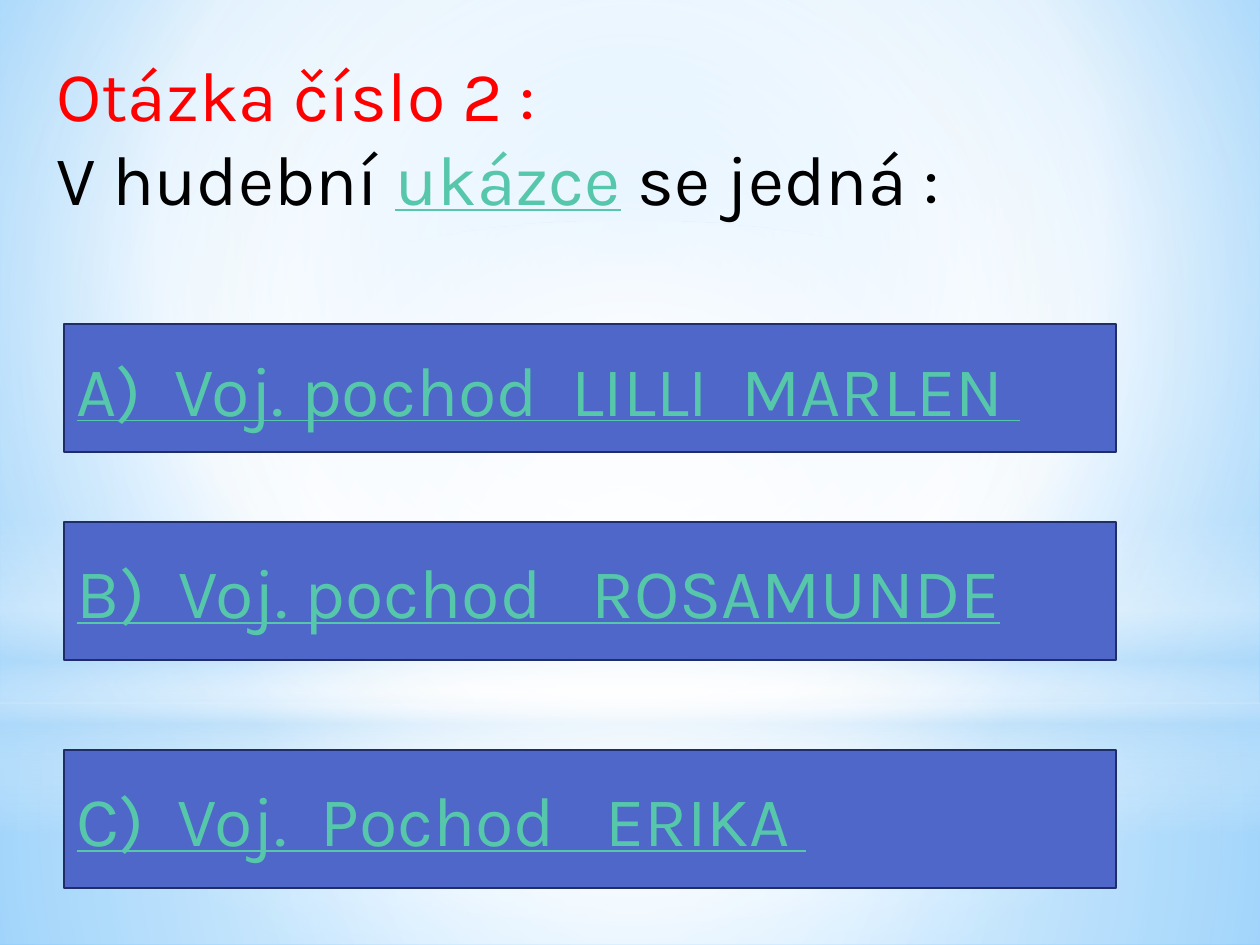
from dataclasses import dataclass

from lxml import etree
from pptx import Presentation
from pptx.dml.color import RGBColor
from pptx.enum.shapes import MSO_SHAPE
from pptx.enum.text import MSO_ANCHOR, MSO_AUTO_SIZE, PP_ALIGN
from pptx.oxml.ns import qn
from pptx.util import Inches, Pt

RECT, OVAL = MSO_SHAPE.RECTANGLE, MSO_SHAPE.OVAL
MIDDLE, LEFT = MSO_ANCHOR.MIDDLE, PP_ALIGN.LEFT
GROW = MSO_AUTO_SIZE.SHAPE_TO_FIT_TEXT
SLIDE_W, SLIDE_H = Inches(10), Inches(7.5)


@dataclass(frozen=True)
class Theme:
    font: str = "Karla"
    size: int = 40
    line_width: float = 1.25
    heading: str = "FF0000"
    text: str = "000000"
    link: str = "56C7AA"
    box: str = "4E67C8"
    box_line: str = "1F2E69"
    white: str = "FFFFFF"
    haze: str = "B4DCFA"
    sky: str = "9ED5FF"
    deep_sky: str = "5BB9FF"


THEME = Theme()
CENTRE = (50, 50, 50, 50)


def place(left, top, width, height):
    """Turn percentages of the slide's size into lengths."""
    return (int(SLIDE_W * left / 100), int(SLIDE_H * top / 100),
            int(SLIDE_W * width / 100), int(SLIDE_H * height / 100))


def set_gradient(fill_parent, stops, focus=None, angle=90):
    """Replace a solid fill by (position, colour, opacity) stops, radial if focus is given."""
    grad = etree.Element(qn("a:gradFill"), rotWithShape="1")
    stop_list = etree.SubElement(grad, qn("a:gsLst"))
    for position, color, opacity in stops:
        stop = etree.SubElement(stop_list, qn("a:gs"), pos=str(position * 1000))
        rgb = etree.SubElement(stop, qn("a:srgbClr"), val=color)
        if opacity < 100:
            etree.SubElement(rgb, qn("a:alpha"), val=str(opacity * 1000))
    if focus:
        radial = etree.SubElement(grad, qn("a:path"), path="circle")
        sides = {side: str(share * 1000) for side, share in zip("ltrb", focus)}
        etree.SubElement(radial, qn("a:fillToRect"), **sides)
    else:
        etree.SubElement(grad, qn("a:lin"), ang=str(angle * 60000), scaled="0")
    fill_parent.replace(fill_parent.find(qn("a:solidFill")), grad)


def add_plain_shape(slide, kind, area, color):
    sp = slide.shapes.add_shape(kind, *place(*area))
    sp.shadow.inherit = False
    sp.fill.solid()
    sp.fill.fore_color.rgb = RGBColor.from_string(color)
    return sp


def add_glow(slide, kind, area, stops, focus=None):
    sp = add_plain_shape(slide, kind, area, THEME.white)
    sp.line.fill.background()
    set_gradient(sp.element.spPr, stops, focus)


def style_paragraph(p):
    p.alignment = LEFT
    p.font.name = THEME.font
    p.font.size = Pt(THEME.size)


def add_run(p, text, color, underline=False):
    r = p.add_run()
    r.text = text
    r.font.color.rgb = RGBColor.from_string(color)
    r.font.underline = underline


def add_sky(slide):
    """Background with its layers of light, from back to front."""
    white, haze = THEME.white, THEME.haze
    slide.background.fill.solid()
    slide.background.fill.fore_color.rgb = RGBColor.from_string(white)
    set_gradient(slide.element.find(".//" + qn("p:bgPr")),
                 [(0, THEME.sky, 100), (60, white, 100), (100, THEME.deep_sky, 100)],
                 (20, 10, 20, 60))
    horizon = 74.4
    add_glow(slide, RECT, (0, horizon, 100, 100 - horizon),
             [(0, white, 91), (37, white, 76), (100, haze, 79)], CENTRE)
    add_glow(slide, RECT, (0, 0, 100, horizon),
             [(0, white, 89), (48, white, 62), (100, haze, 79)], CENTRE)
    add_glow(slide, RECT, (0, 54.93, 100, 33.33),
             [(0, white, 0), (29, white, 30), (45, haze, 40),
              (55, white, 26), (65, haze, 60), (100, white, 0)])
    add_glow(slide, OVAL, (0, 23.33, 100, horizon),
             [(0, white, 100), (56, white, 0)], CENTRE)


def add_question(slide):
    tf = slide.shapes.add_textbox(*place(3.5, 4.8, 89, 19.33)).text_frame
    tf.word_wrap = True
    tf.auto_size = GROW
    p = tf.paragraphs[0]
    style_paragraph(p)
    add_run(p, "Otázka číslo 2 :", THEME.heading)
    p.add_line_break()
    add_run(p, "V hudební ", THEME.text)
    add_run(p, "ukázce", THEME.link, underline=True)
    add_run(p, " se jedná :", THEME.text)


def add_answer(slide, text, top, height):
    sp = add_plain_shape(slide, RECT, (5.1, top, 83.5, height), THEME.box)
    sp.line.color.rgb = RGBColor.from_string(THEME.box_line)
    sp.line.width = Pt(THEME.line_width)
    tf = sp.text_frame
    tf.word_wrap = True
    tf.vertical_anchor = MIDDLE
    p = tf.paragraphs[0]
    style_paragraph(p)
    add_run(p, text, THEME.link, underline=True)


def main():
    prs = Presentation()
    prs.slide_width, prs.slide_height = SLIDE_W, SLIDE_H
    slide = prs.slides.add_slide(prs.slide_layouts[6])
    add_sky(slide)
    add_question(slide)
    for text, top, height in [
        ("A)  Voj. pochod  LILLI  MARLEN ", 34.27, 13.6),
        ("B)  Voj. pochod   ROSAMUNDE", 55.2, 14.67),
        ("C)  Voj.  Pochod   ERIKA ", 79.33, 14.67),
    ]:
        add_answer(slide, text, top, height)
    prs.save("out.pptx")


if __name__ == "__main__":
    main()
